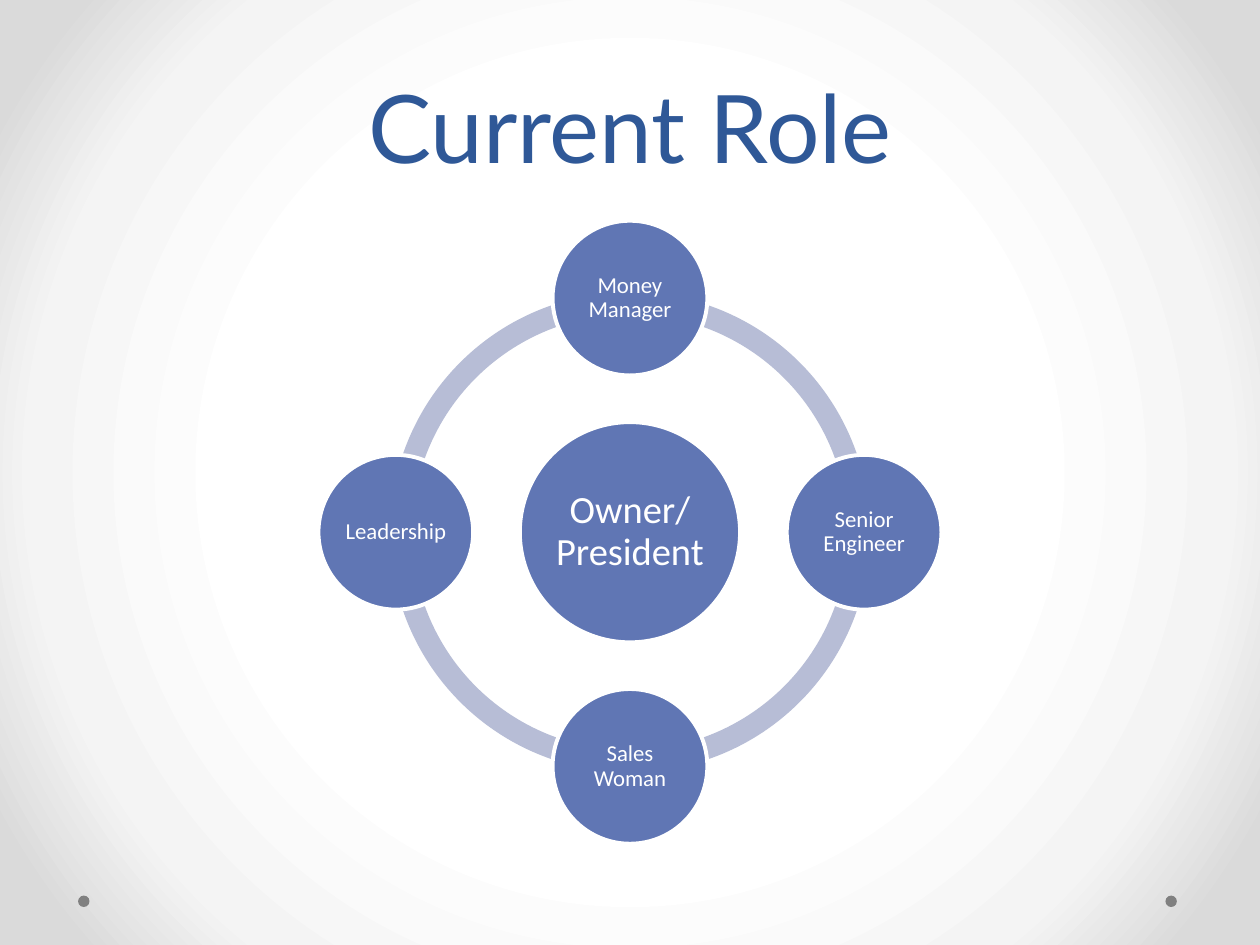
from pptx import Presentation
from pptx.dml.color import RGBColor as Rgb
from pptx.enum.shapes import MSO_SHAPE as Kind
from pptx.enum.text import MSO_ANCHOR as Anchor, PP_ALIGN as Align
from pptx.oxml import parse_xml
from pptx.util import Cm, Pt


def disc(kind, x, y, size, fill):
    shape = slide.shapes.add_shape(
        kind, Cm(x - size / 2), Cm(y - size / 2), Cm(size), Cm(size))
    shape.shadow.inherit = False
    shape.fill.solid()
    shape.fill.fore_color.rgb = Rgb.from_string(fill)
    shape.line.fill.background()
    return shape


def write(shape, text, face, size, color, gap, inset, anchor):
    frame = shape.text_frame
    sides = dict.fromkeys(
        ("margin_left", "margin_right", "margin_top", "margin_bottom"), Cm(inset))
    para = frame.paragraphs[0]
    run = para.add_run()
    run.text = text
    run.font.color.rgb = Rgb.from_string(color)
    looks = (
        (frame, {"word_wrap": True, "vertical_anchor": anchor, **sides}),
        (para, {"alignment": Align.CENTER, "line_spacing": gap}),
        (run.font, {"name": face, "size": Pt(size)}),
    )
    for item, look in looks:
        for key, value in look.items():
            setattr(item, key, value)


deck = Presentation()
deck.slide_width, deck.slide_height = Cm(25.4), Cm(19.05)
slide = deck.slides.add_slide(deck.slide_layouts[6])

stops = "".join(
    f'<a:gs pos="{pos * 1000}"><a:srgbClr val="{tone}"/></a:gs>'
    for pos, tone in ((50, "FFFFFF"), (76, "F4F4F4"), (92, "DADADA")))
slide.element.cSld.insert(0, parse_xml(
    '<p:bg xmlns:p="http://schemas.openxmlformats.org/presentationml/2006/main"'
    ' xmlns:a="http://schemas.openxmlformats.org/drawingml/2006/main">'
    f'<p:bgPr><a:gradFill><a:gsLst>{stops}</a:gsLst><a:path path="circle">'
    '<a:fillToRect l="50000" t="50000" r="50000" b="50000"/></a:path>'
    '</a:gradFill><a:effectLst/></p:bgPr></p:bg>'))

for x in (23.61, 1.69):
    disc(Kind.OVAL, x, 18.17, 0.23, "808080")

mid_x, mid_y, reach = 12.7, 10.73, 4.72
for turn in range(4):
    arc = disc(Kind.BLOCK_ARC, mid_x, mid_y, 9.68, "B7BDD6")
    values = (turn * 54, (turn + 1) * 54 % 216, 0.046)
    for spot, value in enumerate(values):
        arc.adjustments[spot] = value

roles = (
    ("Owner/ President", 0, 0, 4.44, 22, 0.08),
    ("Money Manager", 0, -1, 3.12, 13, 0.05),
    ("Senior Engineer", 1, 0, 3.12, 13, 0.05),
    ("Sales Woman", 0, 1, 3.12, 13, 0.05),
    ("Leadership", -1, 0, 3.12, 13, 0.05),
)
for text, dx, dy, size, font, inset in roles:
    role = disc(Kind.OVAL, mid_x + dx * reach, mid_y + dy * reach, size, "6076B4")
    role.line.color.rgb = Rgb.from_string("FFFFFF")
    role.line.width = Pt(2.25)
    write(role, text, "Calibri", font, "FFFFFF", 0.9, inset, Anchor.MIDDLE)

title = slide.shapes.add_textbox(Cm(1.27), Cm(0.43), Cm(22.86), Cm(3.38))
write(title, "Current Role", "Lato", 54, "2F5897", Pt(58), 0.13, Anchor.BOTTOM)

deck.save("out.pptx")
